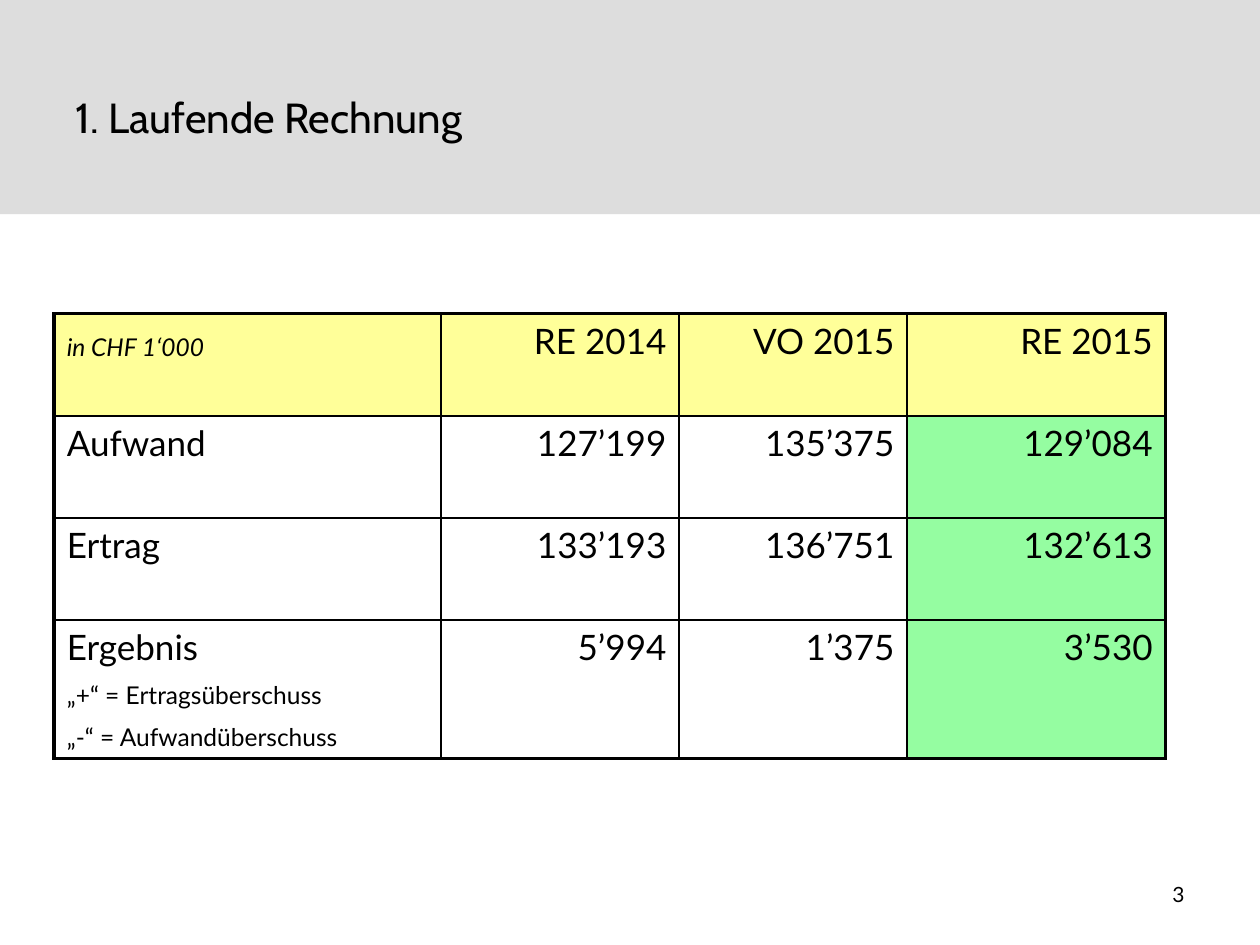
from pptx import Presentation
from pptx.dml.color import RGBColor
from pptx.enum.shapes import MSO_SHAPE
from pptx.enum.text import MSO_ANCHOR, PP_ALIGN
from pptx.oxml import parse_xml
from pptx.oxml.ns import nsdecls
from pptx.util import Inches, Pt

BLACK = RGBColor(0x00, 0x00, 0x00)
WHITE = RGBColor(0xFF, 0xFF, 0xFF)
GREY = RGBColor(0xDD, 0xDD, 0xDD)
YELLOW = RGBColor(0xFF, 0xFF, 0x99)
GREEN = RGBColor(0x95, 0xFD, 0xA1)

TITLE = {"name": "Cabin", "size": Pt(24)}
BODY = {"name": "Lato", "size": Pt(20)}
SMALL = {"name": "Lato", "size": Pt(14)}
UNIT = {**SMALL, "italic": True}
NUMBER = {"name": "Lato", "size": Pt(12)}

ROWS = [
    ["in CHF 1‘000", "RE 2014", "VO 2015", "RE 2015"],
    ["Aufwand", "127’199", "135’375", "129’084"],
    ["Ertrag", "133’193", "136’751", "132’613"],
    ["Ergebnis", "5’994", "1’375", "3’530"],
]
SIGNS = ["„+“ = Ertragsüberschuss", "„-“ = Aufwandüberschuss"]
COL_WIDTHS = [3.07, 1.89, 1.81, 2.05]
ROW_HEIGHTS = [0.81, 0.81, 0.81, 1.1]


def add_run(p, text, style):
    r = p.add_run()
    r.text = text
    for name, value in style.items():
        setattr(r.font, name, value)
    r.font.color.rgb = BLACK


def set_borders(cell, widths):
    tcPr = cell._tc.get_or_add_tcPr()
    # Border lines come before the fill in the cell properties
    for i, (side, width) in enumerate(widths.items()):
        tcPr.insert(i, parse_xml(
            f'<a:{side} {nsdecls("a")} w="{Pt(width)}"><a:solidFill>'
            f'<a:srgbClr val="{BLACK}"/></a:solidFill></a:{side}>'))


def add_header(s, left, top, width, height):
    # Grey band
    band = s.shapes.add_shape(MSO_SHAPE.RECTANGLE, left, top, width, height)
    band.shadow.inherit = False
    band.fill.solid()
    band.fill.fore_color.rgb = GREY
    band.line.fill.background()

    # Title, in front of the band
    title = s.shapes.title
    band._element.addnext(title._element)
    title.left, title.top = left + Inches(0.5), top + Inches(0.3)
    title.width, title.height = width - Inches(1), Inches(1.25)
    tf = title.text_frame
    tf.vertical_anchor = MSO_ANCHOR.MIDDLE
    p = tf.paragraphs[0]
    p.alignment = PP_ALIGN.LEFT
    add_run(p, "1. Laufende Rechnung", TITLE)


def add_accounts_table(s, left, top, width, height):
    last_row, last_col = len(ROWS) - 1, len(COL_WIDTHS) - 1
    table = s.shapes.add_table(len(ROWS), len(COL_WIDTHS),
                               left, top, width, height).table
    for column, w in zip(table.columns, COL_WIDTHS):
        column.width = Inches(w)
    for row, h in zip(table.rows, ROW_HEIGHTS):
        row.height = Inches(h)

    for i, texts in enumerate(ROWS):
        for j, text in enumerate(texts):
            cell = table.cell(i, j)
            cell.fill.solid()
            cell.fill.fore_color.rgb = (
                YELLOW if i == 0 else GREEN if j == last_col else WHITE)
            # Thick outer frame, thin inner lines
            outer = {"lnL": j == 0, "lnR": j == last_col,
                     "lnT": i == 0, "lnB": i == last_row}
            set_borders(cell, {side: 2.25 if edge else 1
                               for side, edge in outer.items()})
            p = cell.text_frame.paragraphs[0]
            p.alignment = PP_ALIGN.RIGHT if j else PP_ALIGN.LEFT
            p.line_spacing = Pt(24)
            p.space_after = Pt(2)
            add_run(p, text, UNIT if i == j == 0 else BODY)

    # Meaning of the signs, below the result label
    p = table.cell(last_row, 0).text_frame.paragraphs[0]
    for sign in SIGNS:
        p.add_line_break()
        add_run(p, sign, SMALL)


def add_page_number(s, left, top, width, height):
    tf = s.shapes.add_textbox(left, top, width, height).text_frame
    tf.word_wrap = True
    p = tf.paragraphs[0]
    p.alignment = PP_ALIGN.RIGHT
    add_run(p, "3", NUMBER)


def main():
    prs = Presentation()
    prs.slide_width, prs.slide_height = Inches(10), Inches(7.5)
    s = prs.slides.add_slide(prs.slide_layouts[5])
    add_header(s, Inches(0), Inches(0), prs.slide_width, Inches(1.7))
    add_accounts_table(s, Inches(0.43), Inches(2.49),
                       Inches(sum(COL_WIDTHS)), Inches(sum(ROW_HEIGHTS)))
    add_page_number(s, Inches(7.17), Inches(6.95), Inches(2.33), Inches(0.4))
    prs.save("out.pptx")


if __name__ == "__main__":
    main()
